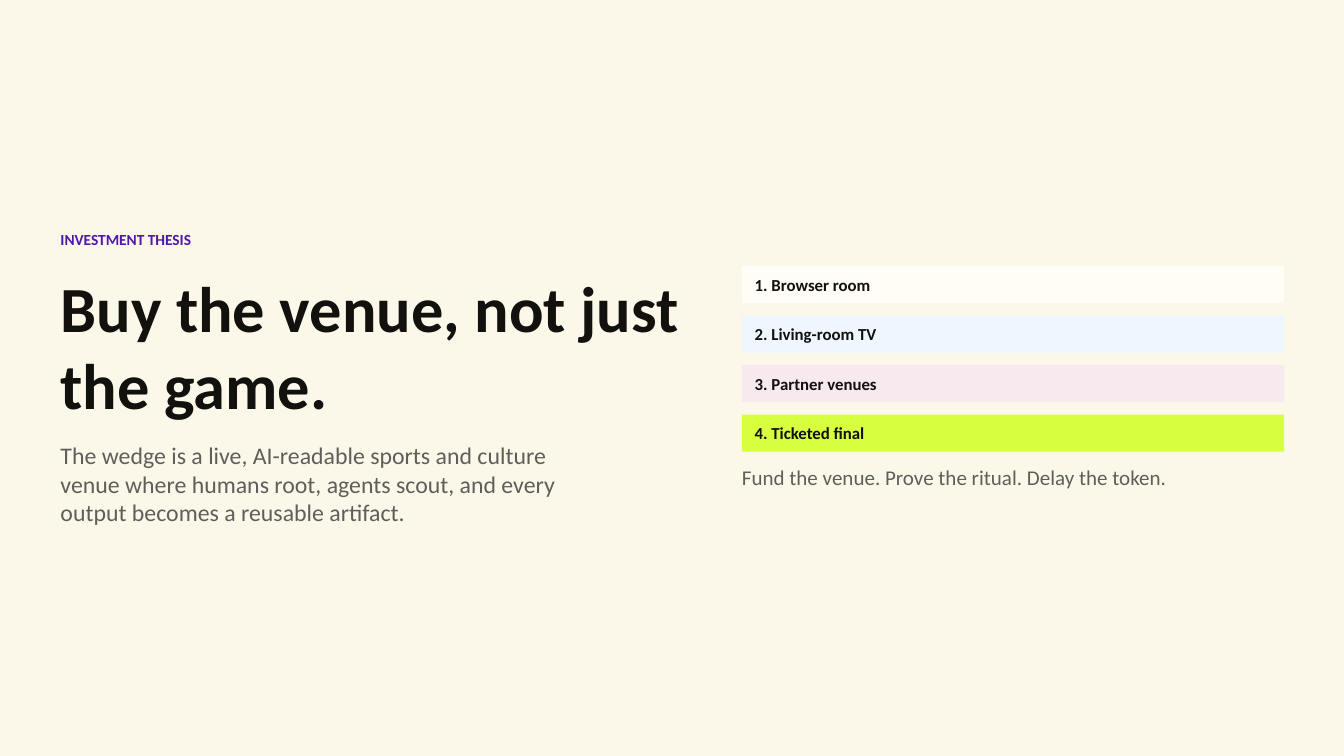
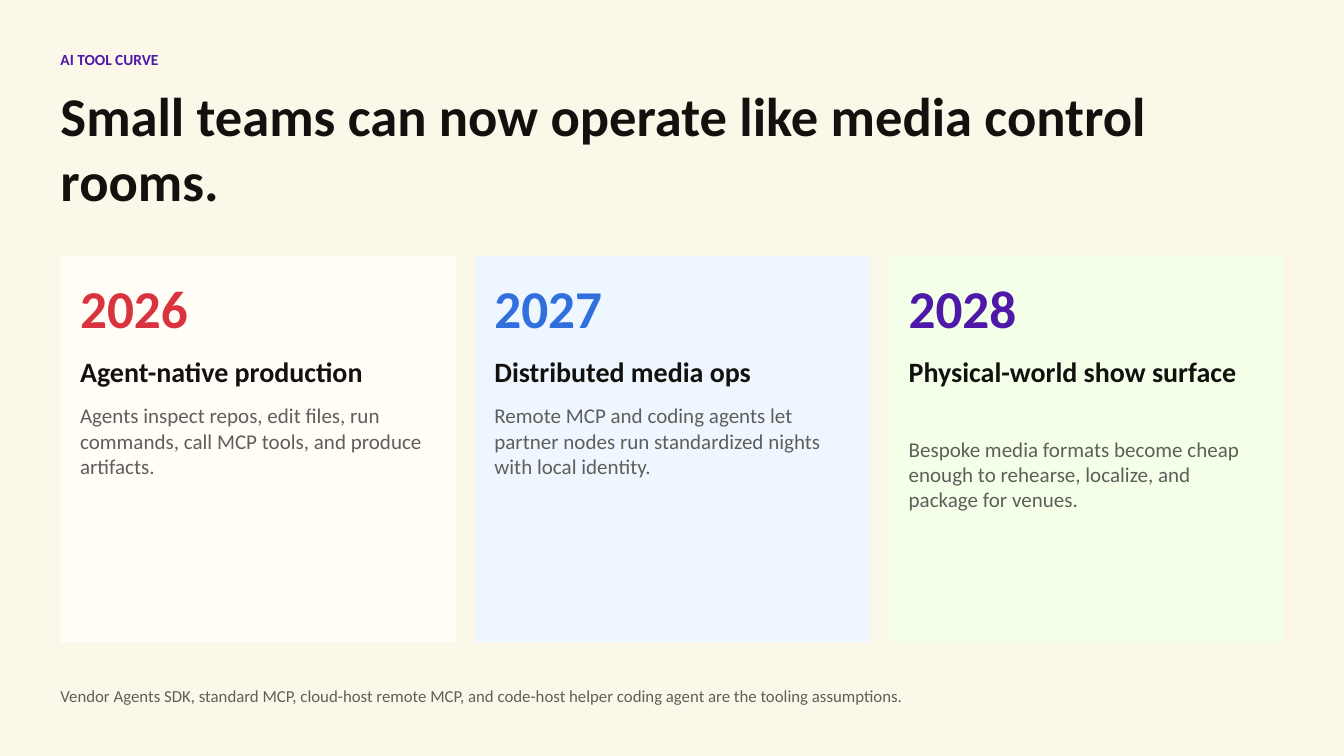
from pptx import Presentation
from pptx.dml.color import RGBColor
from pptx.enum.shapes import MSO_SHAPE
from pptx.util import Inches, Pt

CREAM = RGBColor(0xFB, 0xF7, 0xE9)
INK = RGBColor(0x12, 0x11, 0x0E)
GRAY = RGBColor(0x5F, 0x5E, 0x5A)
VIOLET = RGBColor(0x4E, 0x19, 0xA8)
RED = RGBColor(0xD8, 0x33, 0x3F)
BLUE = RGBColor(0x31, 0x6F, 0xDD)
IVORY = RGBColor(0xFF, 0xFD, 0xF6)
SKY = RGBColor(0xEE, 0xF7, 0xFF)
PINK = RGBColor(0xF8, 0xE9, 0xEF)
LIME = RGBColor(0xD7, 0xFF, 0x3F)
MINT = RGBColor(0xF3, 0xFF, 0xE8)

# All lengths are percent of the slide's width (x, w) or height (y, h)
LEFT, FULL = 4.5, 91.05


class Deck:
    font = "Calibri"

    def __init__(self, wide, high):
        self.prs = Presentation()
        self.prs.slide_width = Inches(wide)
        self.prs.slide_height = Inches(high)
        self.slide = None

    def place(self, x, y, w, h):
        wide, high = self.prs.slide_width / 100, self.prs.slide_height / 100
        return round(x * wide), round(y * high), round(w * wide), round(h * high)

    def start(self):
        self.slide = self.prs.slides.add_slide(self.prs.slide_layouts[6])
        self.panel(0, 0, 100, 100, CREAM)

    def panel(self, x, y, w, h, fill):
        box = self.slide.shapes.add_shape(MSO_SHAPE.RECTANGLE, *self.place(x, y, w, h))
        box.shadow.inherit = False
        box.fill.solid()
        box.fill.fore_color.rgb = fill
        box.line.fill.background()

    def text(self, x, y, w, h, words, size, color=GRAY, bold=False):
        frame = self.slide.shapes.add_textbox(*self.place(x, y, w, h)).text_frame
        frame.word_wrap = True
        frame.margin_left = frame.margin_right = 0
        frame.margin_top = frame.margin_bottom = 0
        para = frame.paragraphs[0]
        para.text = words
        font = para.font
        font.name, font.size, font.bold = self.font, Pt(size), bold
        font.color.rgb = color

    def header(self, y, w, label, title, drop, h, size):
        self.text(LEFT, y, w, 2.6, label, 16.5, VIOLET, True)
        self.text(LEFT, y + drop, w, h, title, size, INK, True)

    def bar(self, x, y, w, words, fill):
        self.panel(x, y, w, 4.89, fill)
        self.text(x + 0.95, y + 1.1, w - 1.9, 2.76, words, 18, INK, True)

    def card(self, x, y, w, h, year, color, fill, head, lines, body):
        pad = 1.46
        self.panel(x, y, w, h, fill)
        left, wide = x + pad, w - 2 * pad
        self.text(left, y + 2.6, wide, 8.53, year, 57, color, True)
        self.text(left, y + 13, wide, lines * 4.44, head, 30, INK, True)
        self.text(left, y + 15 + lines * 4.44, wide, 9.96, body, 22.5)


def thesis(deck):
    deck.start()
    deck.header(30.4, 47.4, "INVESTMENT THESIS",
                "Buy the venue, not just the game.", 5, 20.5, 69)
    deck.text(LEFT, 58.3, 40.4, 11.5,
              "The wedge is a live, AI-readable sports and culture venue where humans "
              "root, agents scout, and every output becomes a reusable artifact.", 25.5)

    # Ladder of venues
    x, w = 55.2, 40.35
    steps = [("Browser room", IVORY), ("Living-room TV", SKY),
             ("Partner venues", PINK), ("Ticketed final", LIME)]
    for i, (name, fill) in enumerate(steps):
        deck.bar(x, 35.2 + i * 6.55, w, f"{i + 1}. {name}", fill)
    deck.text(x, 61.5, w, 3.4, "Fund the venue. Prove the ritual. Delay the token.", 22.5)


def curve(deck):
    deck.start()
    deck.header(6.67, FULL, "AI TOOL CURVE",
                "Small teams can now operate like media control rooms.", 4.1, 17.4, 58.5)

    # One card per year
    years = [
        ("2026", RED, IVORY, "Agent-native production", 1,
         "Agents inspect repos, edit files, run commands, call MCP tools, "
         "and produce artifacts."),
        ("2027", BLUE, SKY, "Distributed media ops", 1,
         "Remote MCP and coding agents let partner nodes run standardized "
         "nights with local identity."),
        ("2028", VIOLET, MINT, "Physical-world show surface", 2,
         "Bespoke media formats become cheap enough to rehearse, localize, "
         "and package for venues."),
    ]
    wide = 29.4
    step = (FULL - wide) / (len(years) - 1)
    for i, year in enumerate(years):
        deck.card(LEFT + i * step, 33.87, wide, 51.1, *year)

    # Source line
    deck.text(LEFT, 90.75, FULL, 2.76,
              "Vendor Agents SDK, standard MCP, cloud-host remote MCP, and "
              "code-host helper coding agent are the tooling assumptions.", 18)


def main():
    deck = Deck(20, 11.25)
    thesis(deck)
    curve(deck)
    deck.prs.save("out.pptx")


if __name__ == "__main__":
    main()
